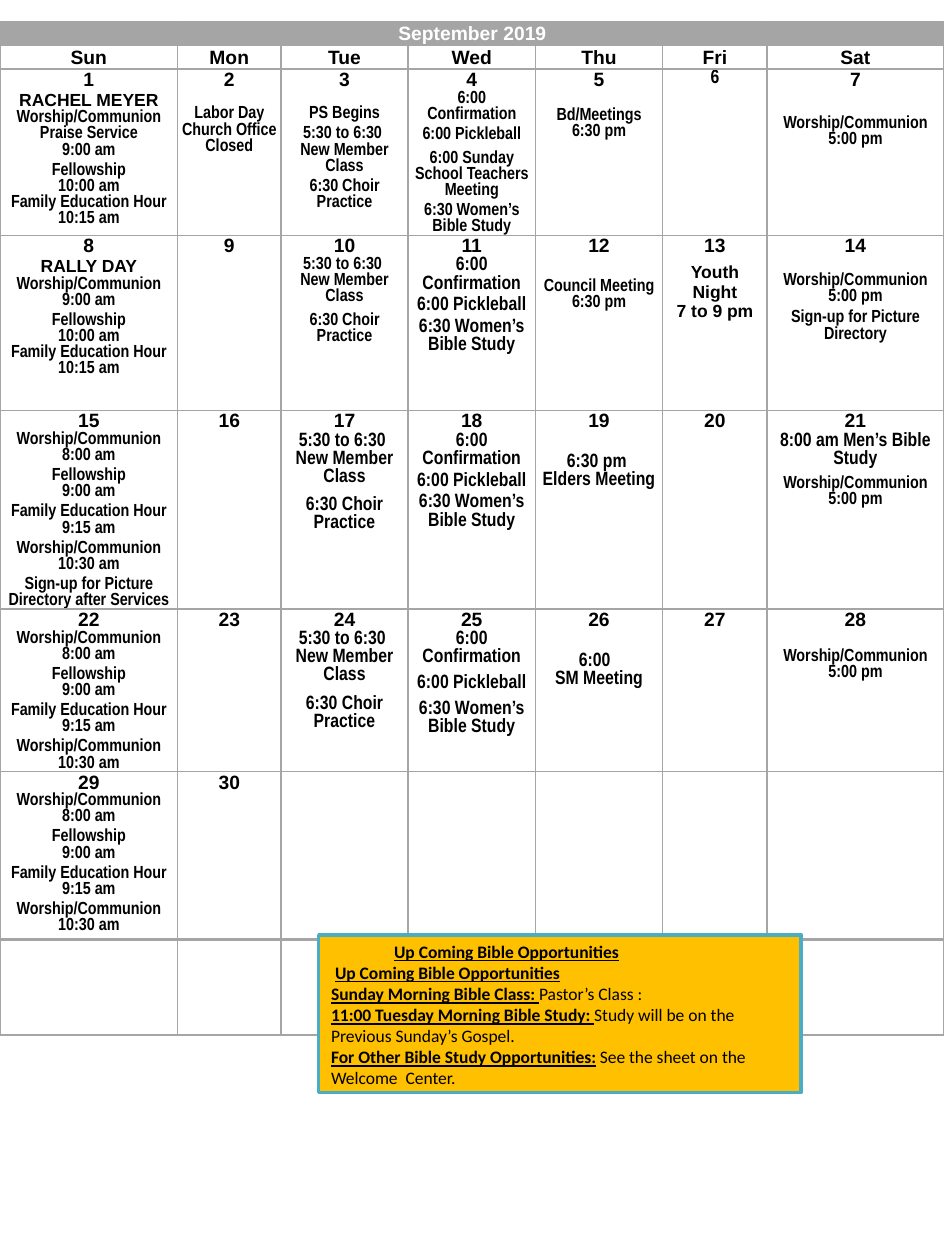
from pptx import Presentation
from pptx import util as u
from pptx.dml import color
from pptx.enum import shapes, text
from pptx.oxml import xmlchemy as x
from pptx.oxml import parse_xml
from pptx.oxml.ns import nsdecls

COLORS = {"gray": "A5A5A5", "white": "FFFFFF", "black": "000000",
          "gold": "FFC000", "teal": "4BACC6"}
ARIAL, NARROW = "Arial", "Arial Narrow"
COLS = [1.41, 0.82, 1.01, 1.01, 1.01, 0.83, 1.4]
ROWS = [0.03, 0.19, 0.69, 1.39, 1.23, 1.13, 1.33, 0.76]
WEEKDAYS = ["Sun", "Mon", "Tue", "Wed", "Thu", "Fri", "Sat"]


def line(words, gap=0, size=10, font=NARROW):
    """Describe one line of a day, with the space above it in points."""
    return words, gap, size, font


def timed(name, time, gap=0):
    """Describe an event with its time below it."""
    return [line(name, gap), line(time)]


def sunday():
    """Return the usual Sunday schedule."""
    return [*timed("Worship/Communion", "8:00 am"),
            *timed("Fellowship", "9:00 am", 2.2),
            *timed("Family Education Hour", "9:15 am", 2.2),
            *timed("Worship/Communion", "10:30 am", 2.2)]


def early_sunday():
    """Return the part shared by the first two Sundays."""
    return [*timed("Fellowship", "10:00 am", 2.2),
            *timed("Family Education Hour", "10:15 am")]


def tuesday(size, gap, first=0, between=0):
    """Return the Tuesday class and choir practice."""
    return [line("5:30 to 6:30 ", first, size),
            line("New Member Class", between, size),
            line("6:30 Choir Practice", gap, size)]


def wednesday(gap):
    """Return the Wednesday evening schedule."""
    return [line("6:00 Confirmation", 0, 11), line("6:00 Pickleball", gap, 11),
            line("6:30 Women’s Bible Study", gap, 11)]


def saturday(gap):
    """Return the Saturday worship service."""
    return timed("Worship/Communion", "5:00 pm", gap)


EVENTS = {
    1: [line("RACHEL MEYER", font=ARIAL), line("Worship/Communion"),
        *timed("Praise Service", "9:00 am"), *early_sunday()],
    2: [line("Labor Day", 9), line("Church Office Closed")],
    3: [line("PS Begins", 9), *tuesday(10, 2.2, 2.2)],
    4: [line("6:00 Confirmation"), line("6:00 Pickleball", 2.2),
        line("6:00 Sunday School Teachers Meeting", 4.4),
        line("6:30 Women’s Bible Study", 2.2)],
    5: timed("Bd/Meetings", "6:30 pm", 10),
    7: saturday(14.5),
    8: [line("RALLY DAY", font=ARIAL),
        *timed("Worship/Communion", "9:00 am"), *early_sunday()],
    10: tuesday(10, 4.4),
    11: wednesday(2.2),
    12: timed("Council Meeting", "6:30 pm", 12.5),
    13: [line("Youth Night", 3.4, font=ARIAL), line("7 to 9 pm", font=ARIAL)],
    14: [*saturday(9), line("Sign-up for Picture Directory", 3)],
    15: [*sunday(), line("Sign-up for Picture Directory after Services", 2.2)],
    17: tuesday(11, 6),
    18: wednesday(2.2),
    19: [line("6:30 pm ", 12.5, 11), line("Elders Meeting", 0, 11)],
    21: [line("8:00 am Men’s Bible Study", 0, 11), *saturday(4.4)],
    22: sunday(),
    24: tuesday(11, 6),
    25: wednesday(4.4),
    26: [line("6:00  ", 12.5, 11), line("SM Meeting", 0, 11)],
    28: saturday(10.3),
    29: sunday(),
}

NOTICE = [
    [("\t", True, False), ("Up Coming Bible Opportunities", True, True)],
    [(" ", False, False), ("Up Coming Bible Opportunities", True, True)],
    [("Sunday Morning Bible Class: ", True, True),
     ("Pastor’s Class :", False, False)],
    [("11:00 Tuesday Morning Bible Study: ", True, True),
     ("Study will be on the Previous Sunday’s Gospel.", False, False)],
    [("For Other Bible Study Opportunities:", True, True),
     (" ", True, False),
     ("See the sheet on the Welcome  Center.", False, False)],
]


def rgb(name):
    """Look up a named colour."""
    return color.RGBColor.from_string(COLORS[name])


def add_run(p, words, size, font, fill="black", bold=True, underline=False):
    """Add one formatted run to a paragraph."""
    r = p.add_run()
    r.text = words
    r.font.size, r.font.name = u.Pt(size), font
    r.font.bold, r.font.underline = bold, underline
    r.font.color.rgb = rgb(fill)


def border(cell, edge, width):
    """Draw one edge of a cell."""
    cell._tc.get_or_add_tcPr().append(parse_xml(
        f'<a:{edge} {nsdecls("a")} w="{u.Pt(width)}"><a:solidFill>'
        f'<a:srgbClr val="{COLORS["gray"]}"/></a:solidFill></a:{edge}>'))


def style_cell(cell, row):
    """Set margins, borders and fill of a cell."""
    cell.margin_left = cell.margin_right = u.Inches(0.03)
    cell.margin_top = cell.margin_bottom = 0
    widths = {"lnL": 1, "lnR": 1, "lnT": 2.25 if row == 7 else 1,
              "lnB": 2.25 if row == 6 else 1}
    for edge, width in widths.items():
        border(cell, edge, width)
    if row == 0:
        cell.fill.solid()
        cell.fill.fore_color.rgb = rgb("gray")
    else:
        cell.fill.background()
    end = cell.text_frame.paragraphs[0]._p.get_or_add_endParaRPr()
    end.set("sz", "1100")


def write_cell(cell, lines, fill="black", spacing=1.0):
    """Write centred lines into a cell."""
    tf = cell.text_frame
    for i, (words, gap, size, font) in enumerate(lines):
        p = tf.add_paragraph() if i else tf.paragraphs[0]
        p.alignment = text.PP_ALIGN.CENTER
        p.line_spacing, p.space_before = spacing, u.Pt(gap)
        add_run(p, words, size, font, fill)


def add_calendar(s):
    """Add the month table."""
    frame = s.shapes.add_table(len(ROWS), len(COLS), 0, u.Inches(0.17),
                               u.Inches(sum(COLS)), u.Inches(sum(ROWS)))
    table = frame.table
    table.first_row = table.horz_banding = False
    for column, width in zip(table.columns, COLS):
        column.width = u.Inches(width)
    for i, height in enumerate(ROWS):
        table.rows[i].height = u.Inches(height)
        for cell in table.rows[i].cells:
            style_cell(cell, i)
    table.cell(0, 1).merge(table.cell(0, 5))
    write_cell(table.cell(0, 1), [line("September 2019", 0, 11, ARIAL)],
               "white", 1.07)
    for i, name in enumerate(WEEKDAYS):
        write_cell(table.cell(1, i), [line(name, 1, 11, ARIAL)], spacing=1.07)
    for day in range(1, 31):
        week, weekday = divmod(day - 1, 7)
        number = line(str(day), 0, 11, NARROW if day == 6 else ARIAL)
        write_cell(table.cell(week + 2, weekday),
                   [number, *EVENTS.get(day, [])])


def add_notice(s):
    """Add the box of Bible study opportunities."""
    sp = s.shapes.add_shape(shapes.MSO_SHAPE.RECTANGLE, u.Inches(2.53),
                            u.Inches(7.42), u.Inches(3.83), u.Inches(1.25))
    sp.shadow.inherit = False
    sp.fill.solid()
    sp.fill.fore_color.rgb = rgb("gold")
    sp.line.color.rgb, sp.line.width = rgb("teal"), u.Pt(2)
    tf = sp.text_frame
    tf.word_wrap, tf.vertical_anchor = True, text.MSO_ANCHOR.TOP
    for i, runs in enumerate(NOTICE):
        p = tf.add_paragraph() if i else tf.paragraphs[0]
        p.alignment = text.PP_ALIGN.LEFT
        for words, bold, underline in runs:
            add_run(p, words, 10, "Calibri", "black", bold, underline)


def main():
    """Build and save the calendar slide."""
    prs = Presentation()
    prs.slide_width, prs.slide_height = u.Inches(7.5), u.Inches(10)
    s = prs.slides.add_slide(prs.slide_layouts[6])
    add_calendar(s)
    add_notice(s)
    prs.save("out.pptx")


if __name__ == "__main__":
    main()
